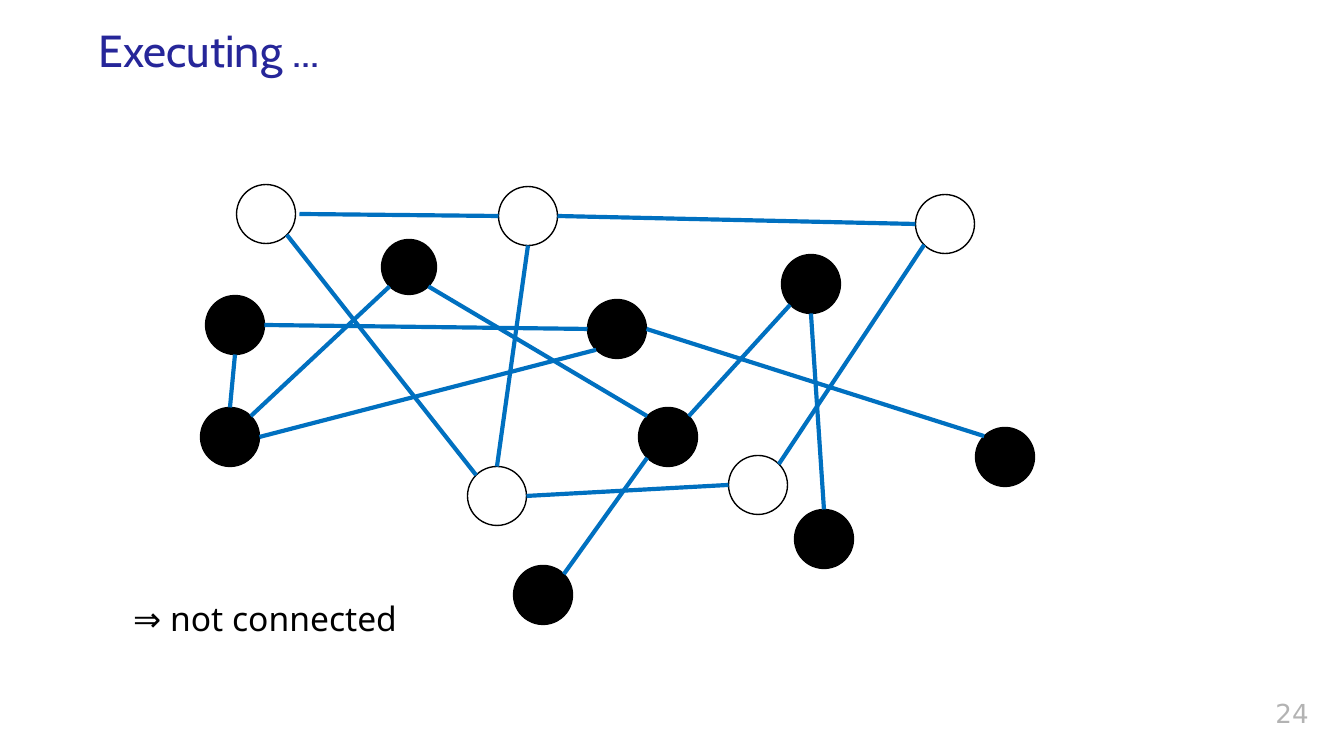
from dataclasses import dataclass

from lxml import etree
from pptx import Presentation
from pptx import util as u
from pptx.dml.color import RGBColor
from pptx.enum import shapes, text
from pptx.oxml.ns import qn

EMU_PER_PX = 914400 / 134.4


@dataclass(frozen=True)
class Theme:
    title: str = "262699"
    ink: str = "000000"
    paper: str = "FFFFFF"
    edge: str = "0070C0"
    muted: str = "B3B3B3"
    title_size: int = 24
    body_size: int = 18
    number_size: int = 14
    node_line: float = 0.75
    edge_line: float = 2.25


THEME = Theme()
DIAMETER = 59
DIAGONAL = 0.707

# Direction from a node's centre to a point on its rim
COMPASS = {
    "n": (0, -1), "e": (1, 0), "s": (0, 1), "w": (-1, 0),
    "ne": (DIAGONAL, -DIAGONAL), "se": (DIAGONAL, DIAGONAL),
    "sw": (-DIAGONAL, DIAGONAL), "nw": (-DIAGONAL, -DIAGONAL),
}

# name: centre x, centre y, diameter, fill
NODES = {
    "B": (409, 267, 55, THEME.ink),
    "A": (266, 214, DIAMETER, THEME.paper),
    "C": (235, 325, DIAMETER, THEME.ink),
    "D": (230, 437, DIAMETER, THEME.ink),
    "E": (497, 496, DIAMETER, THEME.paper),
    "F": (528, 216, DIAMETER, THEME.paper),
    "G": (617, 329, DIAMETER, THEME.ink),
    "H": (811, 284, DIAMETER, THEME.ink),
    "I": (668, 437, DIAMETER, THEME.ink),
    "J": (758, 485, DIAMETER, THEME.paper),
    "K": (824, 539, DIAMETER, THEME.ink),
    "L": (543, 595, DIAMETER, THEME.ink),
    "M": (1005, 457, DIAMETER, THEME.ink),
    "N": (945, 224, DIAMETER, THEME.paper),
}

# start node, side, end node, side, gap before the line starts
EDGES = [
    ("A", "e", "F", "w", 4),
    ("A", "se", "E", "nw", 0),
    ("F", "e", "N", "w", 0),
    ("F", "s", "E", "n", 0),
    ("J", "ne", "N", "sw", 0),
    ("G", "e", "M", "nw", 0),
    ("I", "ne", "H", "sw", 0),
    ("C", "e", "G", "w", 0),
    ("C", "s", "D", "n", 0),
    ("D", "ne", "B", "sw", 0),
    ("L", "ne", "I", "sw", 0),
    ("I", "nw", "B", "se", 0),
    ("E", "e", "J", "w", 0),
    ("H", "s", "K", "n", 0),
    ("D", "e", "G", "sw", 0),
]


def px(*lengths):
    return [u.Emu(round(length * EMU_PER_PX)) for length in lengths]


def write(frame, words, font, size, color, align=text.PP_ALIGN.LEFT):
    paragraph = frame.paragraphs[0]
    paragraph.alignment = align
    run = paragraph.add_run()
    run.text = words
    for name, value in {"name": font, "size": u.Pt(size)}.items():
        setattr(run.font, name, value)
    run.font.color.rgb = RGBColor.from_string(color)


def add_title(slide, words):
    title = slide.shapes.title
    title.left, title.top, title.width, title.height = px(85, 35, 1200, 79)
    frame = title.text_frame
    # The deep bottom inset lifts the heading within its box
    layout = {
        "auto_size": text.MSO_AUTO_SIZE.NONE,
        "vertical_anchor": text.MSO_ANCHOR.MIDDLE,
        "margin_bottom": px(56)[0],
    }
    for name, value in layout.items():
        setattr(frame, name, value)
    write(frame, words, "Cabin", THEME.title_size, THEME.title)


def add_label(slide, box, words, wrap, **style):
    frame = slide.shapes.add_textbox(*px(*box)).text_frame
    frame.word_wrap = wrap
    write(frame, words, **style)


def add_node(slide, x, y, diameter, fill):
    node = slide.shapes.add_shape(
        shapes.MSO_SHAPE.OVAL,
        *px(x - diameter / 2, y - diameter / 2, diameter, diameter))
    node.shadow.inherit = False
    node.fill.solid()
    node.fill.fore_color.rgb = RGBColor.from_string(fill)
    node.line.color.rgb = RGBColor.from_string(THEME.ink)
    node.line.width = u.Pt(THEME.node_line)


def rim_point(name, side, gap=0):
    x, y, diameter, _ = NODES[name]
    dx, dy = COMPASS[side]
    reach = diameter / 2 + gap
    return x + dx * reach, y + dy * reach


def add_edge(slide, start, start_side, end, end_side, gap):
    edge = slide.shapes.add_connector(
        shapes.MSO_CONNECTOR.STRAIGHT,
        *px(*rim_point(start, start_side, gap), *rim_point(end, end_side)))
    edge.line.color.rgb = RGBColor.from_string(THEME.edge)
    edge.line.width = u.Pt(THEME.edge_line)
    etree.SubElement(edge._element.spPr, qn("a:effectLst"))


def main():
    deck = Presentation()
    deck.slide_width, deck.slide_height = px(1344, 756)
    slide = deck.slides.add_slide(deck.slide_layouts[5])
    add_title(slide, "Executing ...")
    add_label(slide, (1042, 691, 280, 50), "24", True, font="DejaVu Sans",
              size=THEME.number_size, color=THEME.muted,
              align=text.PP_ALIGN.RIGHT)
    for node in NODES.values():
        add_node(slide, *node)
    for edge in EDGES:
        add_edge(slide, *edge)
    add_label(slide, (120, 591, 302, 54), "⇒ not connected", False,
              font="Noto Sans", size=THEME.body_size, color=THEME.ink)
    deck.save("out.pptx")


if __name__ == "__main__":
    main()
